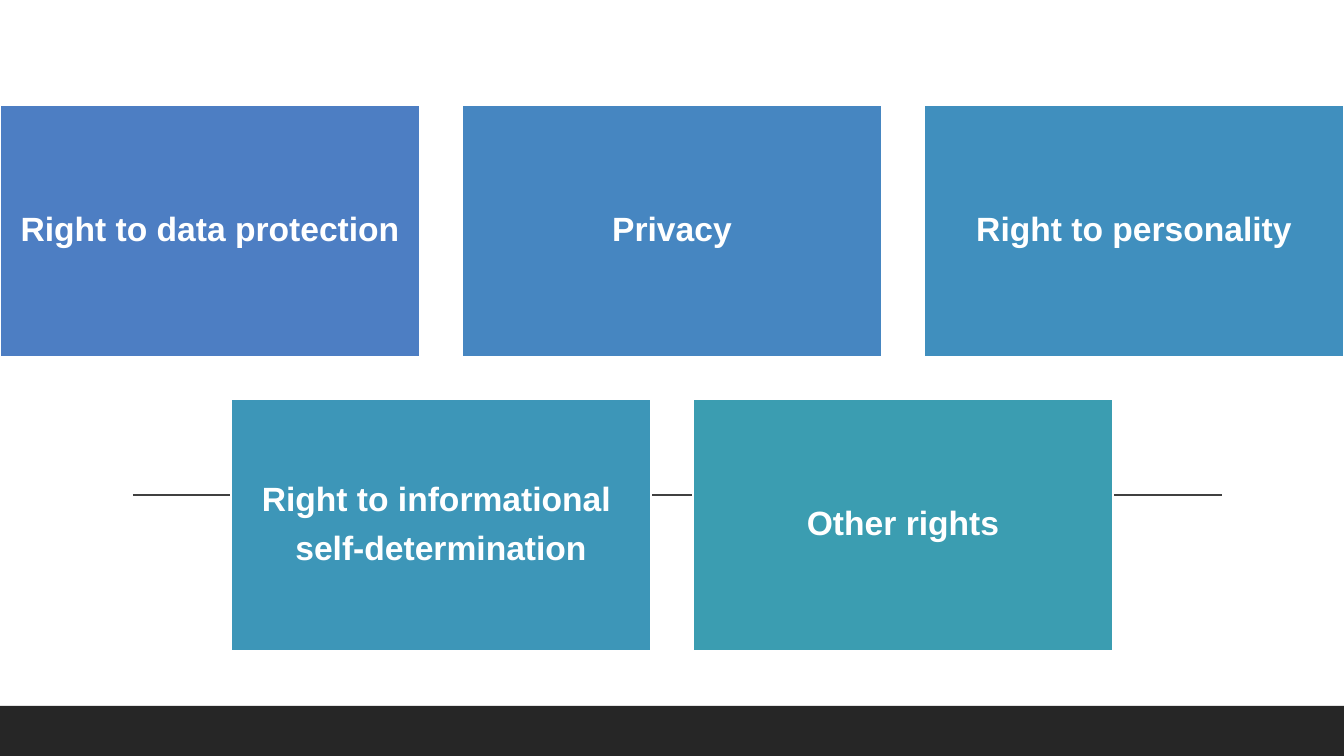
from lxml import etree
from pptx import Presentation
from pptx.dml.color import RGBColor
from pptx.enum.shapes import MSO_CONNECTOR, MSO_SHAPE
from pptx.enum.text import MSO_ANCHOR, PP_ALIGN
from pptx.oxml.ns import qn
from pptx.util import Emu, Pt

RECTANGLE = MSO_SHAPE.RECTANGLE
STRAIGHT = MSO_CONNECTOR.STRAIGHT
MIDDLE = MSO_ANCHOR.MIDDLE
CENTER = PP_ALIGN.CENTER

EMU_PER_PX = 914400 / 100.8
PAGE_WIDTH, PAGE_HEIGHT = 1344, 756
CARD_WIDTH, CARD_HEIGHT, GAP = 420, 252, 42
CARD_ROWS = [
    [("Right to data protection", "4D7EC3"), ("Privacy", "4686C1"), ("Right to personality", "408FBE")],
    [("Right to informational \nself-determination", "3D96B8"), ("Other rights", "3B9DB1")],
]


def px(length):
    """Turn pixels into EMU."""
    return Emu(round(length * EMU_PER_PX))


def color(code):
    """Turn a hex string into a colour."""
    return RGBColor.from_string(code)


def add_rectangle(page, left, top, width, height, fill):
    """Add a flat filled rectangle without an outline."""
    box = page.shapes.add_shape(RECTANGLE, px(left), px(top), px(width), px(height))
    box.shadow.inherit = False
    box.fill.solid()
    box.fill.fore_color.rgb = color(fill)
    box.line.fill.background()
    return box


def add_rule(page, left, right, top):
    """Add the thin horizontal rule behind the cards."""
    rule = page.shapes.add_connector(STRAIGHT, px(left), px(top), px(right), px(top))
    rule.line.color.rgb = color("404040")
    rule.line.width = Pt(1)
    etree.SubElement(rule._element.spPr, qn("a:effectLst"))


def add_card(page, left, top, label, fill):
    """Add one coloured card with its centred label."""
    box = add_rectangle(page, left, top, CARD_WIDTH, CARD_HEIGHT, fill)
    box.line.color.rgb = color("FFFFFF")
    box.line.width = Pt(1.25)
    frame = box.text_frame
    frame.word_wrap = True
    frame.vertical_anchor = MIDDLE
    frame.margin_left = frame.margin_right = px(10)
    frame.margin_top = frame.margin_bottom = px(10)
    frame.text = label
    for para in frame.paragraphs:
        para.alignment = CENTER
        para.line_spacing = 0.9
        para.space_after = Pt(9.5)
        for span in para.runs:
            span.font.name = "Arial"
            span.font.size = Pt(24)
            span.font.bold = True
            span.font.color.rgb = color("FFFFFF")


def add_card_grid(page, left, top, width):
    """Place the rows of cards, each row centred in the given width."""
    for row, cards in enumerate(CARD_ROWS):
        row_width = len(cards) * (CARD_WIDTH + GAP) - GAP
        row_left = left + (width - row_width) // 2
        row_top = top + row * (CARD_HEIGHT + GAP)
        for column, (label, fill) in enumerate(cards):
            add_card(page, row_left + column * (CARD_WIDTH + GAP), row_top, label, fill)


def main():
    """Build the slide and save it."""
    deck = Presentation()
    deck.slide_width, deck.slide_height = px(PAGE_WIDTH), px(PAGE_HEIGHT)
    page = deck.slides.add_slide(deck.slide_layouts[6])
    add_rectangle(page, 0, 706, PAGE_WIDTH, 50, "262626")
    add_rule(page, 133, 1222, 495)
    add_card_grid(page, 0, 105, PAGE_WIDTH)
    deck.save("out.pptx")


if __name__ == "__main__":
    main()
